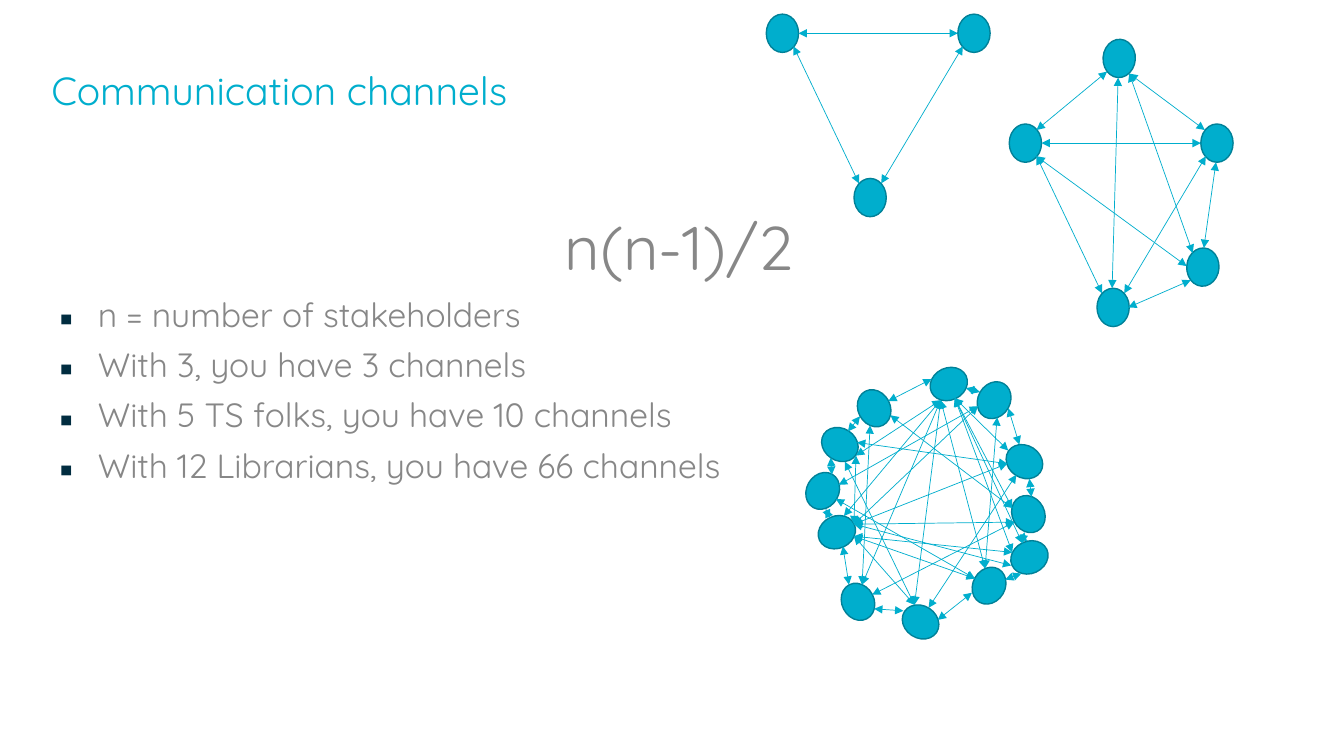
from dataclasses import dataclass
from lxml.etree import SubElement
from pptx import Presentation
from pptx.dml.color import RGBColor
from pptx.enum.shapes import MSO_CONNECTOR, MSO_SHAPE
from pptx.enum.text import MSO_ANCHOR, MSO_AUTO_SIZE, PP_ALIGN
from pptx.oxml.ns import qn
from pptx.util import Inches, Pt


@dataclass
class Theme:
    font: str = "Quicksand"
    teal: str = "00AECD"
    rim: str = "008198"
    gray: str = "878787"
    navy: str = "012D40"
    title: int = 28
    formula: int = 44
    body: int = 24


theme = Theme()


def add_run(para, text, size, color):
    run = para.add_run()
    run.text = text
    run.font.name = theme.font
    run.font.size = Pt(size)
    run.font.color.rgb = RGBColor.from_string(color)
    para.line_spacing = 0.9


def add_web(group, dots, fans, dx=0, dy=0):
    # Dots are (left, top, turn); fans run from one point to many
    for left, top, turn in dots:
        dot = group.shapes.add_shape(
            MSO_SHAPE.OVAL, Inches(left + dx), Inches(top + dy), Inches(0.32), Inches(0.38))
        dot.rotation = turn
        dot.shadow.inherit = False
        dot.fill.solid()
        dot.fill.fore_color.rgb = RGBColor.from_string(theme.teal)
        dot.line.color.rgb = RGBColor.from_string(theme.rim)
        dot.line.width = Pt(1)
    for (x, y), ends in fans:
        for to_x, to_y in ends:
            link = group.shapes.add_connector(
                MSO_CONNECTOR.STRAIGHT, Inches(x + dx), Inches(y + dy),
                Inches(to_x + dx), Inches(to_y + dy))
            link.line.color.rgb = RGBColor.from_string(theme.teal)
            link.line.width = Pt(0.5)
            props = link._element.spPr
            for end in ("a:headEnd", "a:tailEnd"):
                SubElement(props.find(qn("a:ln")), qn(end), type="triangle")
            SubElement(props, qn("a:effectLst"))


deck = Presentation()
deck.slide_width, deck.slide_height = Inches(13.33), Inches(7.5)
slide = deck.slides.add_slide(deck.slide_layouts[1])
title, body = slide.placeholders[0], slide.placeholders[1]

# Title
title.left, title.top = Inches(0.41), Inches(0.55)
title.width, title.height = Inches(11.5), Inches(0.74)
frame = title.text_frame
frame.auto_size = MSO_AUTO_SIZE.NONE
frame.vertical_anchor = MSO_ANCHOR.MIDDLE
frame.paragraphs[0].alignment = PP_ALIGN.LEFT
add_run(frame.paragraphs[0], "Communication channels", theme.title, theme.teal)

# Formula
body.left, body.top = Inches(0.49), Inches(2.11)
body.width, body.height = Inches(12.49), Inches(4.96)
frame = body.text_frame
frame.auto_size = MSO_AUTO_SIZE.NONE
para = frame.paragraphs[0]
para.alignment = PP_ALIGN.CENTER
para.space_before = Pt(10)
add_run(para, "n(n-1)/2", theme.formula, theme.gray)
props = para._p.get_or_add_pPr()
props.set("marL", "0")
props.set("indent", "0")
SubElement(props, qn("a:buNone"))

# Bullets
for text in (
    "n = number of stakeholders",
    "With 3, you have 3 channels",
    "With 5 TS folks, you have 10 channels",
    "With 12 Librarians, you have 66 channels",
):
    para = frame.add_paragraph()
    para.space_before = Pt(10)
    add_run(para, text, theme.body, theme.gray)
    props = para._p.get_or_add_pPr()
    props.set("marL", str(Inches(0.38)))
    props.set("indent", str(-Inches(0.38)))
    tint = SubElement(props, qn("a:buClr"))
    SubElement(tint, qn("a:srgbClr"), val=theme.navy)
    SubElement(props, qn("a:buFont"), typeface="Noto Sans Symbols")
    SubElement(props, qn("a:buChar"), char="▪")

# Three people
trio = [(9.5, 0.14, 0), (7.6, 0.14, 0), (8.47, 1.77, 0)]
sides = [
    ((7.87, 0.46), [(8.52, 1.82)]),
    ((7.92, 0.33), [(9.5, 0.33)]),
    ((9.55, 0.46), [(8.74, 1.82)]),
]
add_web(slide.shapes.add_group_shape(), trio, sides)

# Five people: the same trio, moved, and two more
five = slide.shapes.add_group_shape()
add_web(five, trio, sides, 2.41, 1.09)
add_web(five, [(11.77, 2.46, 3.7), (10.94, 0.39, 3.7)], [
    ((11.2, 0.73), [(11.83, 2.51), (11.95, 1.29)]),
    ((10.98, 0.71), [(10.28, 1.29)]),
    ((11.09, 0.77), [(11.03, 2.86)]),
    ((11.81, 2.78), [(11.19, 3.05)]),
    ((11.77, 2.64), [(10.28, 1.55)]),
    ((11.94, 2.46), [(12.06, 1.61)]),
])

# Twelve people, clockwise from the top
ring = [
    (9.25, 3.62, 65), (9.7, 3.78, 209.7), (10, 4.39, 123.2), (10.04, 4.91, 152.8),
    (10.05, 5.34, 65), (9.65, 5.62, 209.7), (8.97, 5.98, 123.2), (8.35, 5.78, 152.8),
    (8.14, 5.09, 65), (8, 4.68, 209.7), (8.17, 4.22, 123.2), (8.51, 3.86, 152.8),
]
rim = [
    ((9.58, 3.85), [(9.72, 3.89)]),
    ((10, 4.05), [(10.11, 4.41)]),
    ((10.21, 4.75), [(10.23, 4.93)]),
    ((10.14, 5.39), [(10.16, 5.28)]),
    ((9.97, 5.75), [(10.13, 5.69)]),
    ((9.3, 6.15), [(9.64, 5.88)]),
    ((8.67, 6.04), [(8.96, 6.06)]),
    ((8.36, 5.42), [(8.42, 5.8)]),
    ((8.19, 5.05), [(8.23, 5.14)]),
    ((8.24, 4.54), [(8.25, 4.71)]),
    ((8.53, 4.13), [(8.41, 4.28)]),
    ((8.81, 3.98), [(9.24, 3.76)]),
]
cross = [
    ((9.33, 3.97), [(8.49, 4.52), (8.37, 5.12), (8.55, 5.8), (9.07, 6), (9.77, 5.64)]),
    ((9.47, 3.95), [(10.14, 5.39), (10.04, 5.48), (10.04, 5.04), (10, 4.47)]),
    ((8.47, 5.2), [(8.49, 4.52), (9.7, 4.03), (9.99, 4.6), (10.06, 5.18), (10.03, 5.61)]),
    ((8.47, 5.32), [(10.04, 5.48), (9.67, 5.74), (9.07, 6)]),
    ((9.99, 4.6), [(8.5, 4.39)]),
    ((10.08, 4.71), [(9.21, 6.03)]),
    ((9.07, 6), [(8.38, 4.58)]),
    ((10.04, 5.04), [(8.83, 4.12)]),
    ((10.06, 5.18), [(8.65, 5.9)]),
    ((8.55, 5.8), [(8.63, 4.22)]),
    ((9.77, 5.64), [(9.89, 4.14)]),
    ((9.67, 5.74), [(8.29, 4.95)]),
    ((8.32, 4.81), [(9.7, 4.03)]),
]
add_web(slide.shapes.add_group_shape(), ring, rim + cross)

deck.save("out.pptx")
